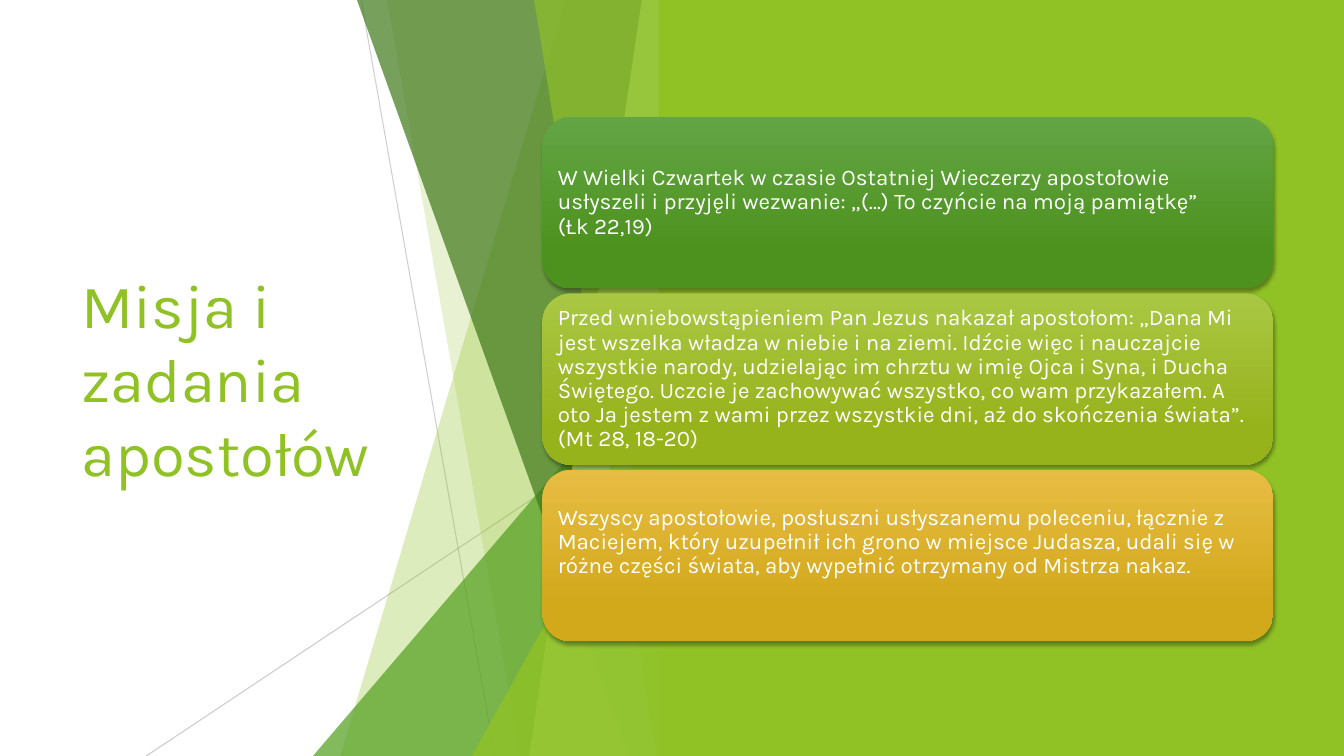
from pptx import Presentation
from pptx.dml.color import RGBColor
from pptx.enum.shapes import MSO_CONNECTOR, MSO_SHAPE
from pptx.enum.text import MSO_ANCHOR, MSO_AUTO_SIZE, PP_ALIGN
from pptx.oxml import parse_xml
from pptx.oxml.ns import nsdecls
from pptx.util import Pt
from lxml.etree import SubElement

FONT = "Karla"
A = "{http://schemas.openxmlformats.org/drawingml/2006/main}"
COLORS = {
    "white": "FFFFFF", "black": "000000", "gray": "BFBFBF",
    "lime": "90C226", "green": "54A021", "dark": "3F7819", "pale": "C0E474",
    "green_top": "63A545", "green_end": "4D921E",
    "olive_top": "AAC744", "olive_end": "97B31C",
    "gold_top": "E7BC43", "gold_end": "D2A91B",
}
RIGHT, BOTTOM = 480, 540
CARD_LEFT, CARD_TOP, CARD_W, CARD_H, CARD_STEP = 387.5, 83.5, 522, 122.5, 126
CARDS = [
    ("green", ["W Wielki Czwartek w czasie Ostatniej Wieczerzy apostołowie usłyszeli "
               "i przyjęli wezwanie: „(…) To czyńcie na moją pamiątkę” ",
               "(Łk 22,19)"]),
    ("olive", ["Przed wniebowstąpieniem Pan Jezus nakazał apostołom: „Dana Mi jest "
               "wszelka władza w niebie i na ziemi. Idźcie więc i nauczajcie wszystkie "
               "narody, udzielając im chrztu w imię Ojca i Syna, i Ducha Świętego. "
               "Uczcie je zachowywać wszystko, co wam przykazałem. A oto Ja jestem z wami "
               "przez wszystkie dni, aż do skończenia świata”. (Mt 28, 18-20)"]),
    ("gold", ["Wszyscy apostołowie, posłuszni usłyszanemu poleceniu, łącznie z Maciejem, "
              "który uzupełnił ich grono w miejsce Judasza, udali się w różne części "
              "świata, aby wypełnić otrzymany od Mistrza nakaz.", ""]),
]


def rgb(name):
    """Return the named colour."""
    return RGBColor.from_string(COLORS[name])


def set_alpha(fill_parent, percent):
    """Make the solid fill inside an element partly transparent."""
    color = fill_parent.find(f"{A}solidFill")[0]
    SubElement(color, f"{A}alpha").set("val", str(percent * 1000))


def paint(s, color, alpha=100):
    """Give a shape a flat fill without outline or shadow."""
    s.shadow.inherit = False
    s.fill.solid()
    s.fill.fore_color.rgb = rgb(color)
    s.line.fill.background()
    if alpha < 100:
        set_alpha(s._element.spPr, alpha)


def add_facet(slide, top_left, bottom_left, color, alpha):
    """Draw a full-height facet with a slanted left edge."""
    fb = slide.shapes.build_freeform(Pt(top_left), 0)
    corners = [(RIGHT, 0), (RIGHT, BOTTOM), (bottom_left, BOTTOM)]
    fb.add_line_segments([(Pt(x), Pt(y)) for x, y in corners])
    paint(fb.convert_to_shape(), color, alpha)


def add_triangle(slide, left, top, color, alpha):
    """Draw a right triangle standing in the facets' lower right corner."""
    s = slide.shapes.add_shape(MSO_SHAPE.ISOSCELES_TRIANGLE, Pt(left), Pt(top),
                               Pt(RIGHT - left), Pt(BOTTOM - top))
    s.adjustments[0] = 1
    paint(s, color, alpha)


def add_ray(slide, x1, y1, x2, y2, alpha):
    """Draw a thin gray line."""
    s = slide.shapes.add_connector(MSO_CONNECTOR.STRAIGHT, Pt(x1), Pt(y1), Pt(x2), Pt(y2))
    s.line.color.rgb = rgb("gray")
    s.line.width = Pt(0.75)
    set_alpha(s.line._ln, alpha)
    SubElement(s._element.spPr, f"{A}effectLst")


def add_run(p, text, size, color):
    """Append a formatted run to a paragraph."""
    r = p.add_run()
    r.text = text
    r.font.name = FONT
    r.font.size = Pt(size)
    r.font.color.rgb = rgb(color)


def add_title(slide, text):
    """Place and format the title placeholder."""
    s = slide.shapes.title
    s.left, s.top, s.width, s.height = Pt(51), Pt(108.5), Pt(279.5), Pt(322.5)
    tf = s.text_frame
    tf.auto_size = MSO_AUTO_SIZE.NONE
    tf.vertical_anchor = MSO_ANCHOR.MIDDLE
    p = tf.paragraphs[0]
    p.alignment = PP_ALIGN.LEFT
    add_run(p, text, 44, "lime")


def add_shadow(s):
    """Add a soft shadow below a shape."""
    s._element.spPr.append(parse_xml(
        f'<a:effectLst {nsdecls("a")}><a:outerShdw blurRad="{Pt(3)}" dist="{Pt(2)}" '
        f'dir="5400000" rotWithShape="0"><a:srgbClr val="{COLORS["black"]}">'
        '<a:alpha val="35000"/></a:srgbClr></a:outerShdw></a:effectLst>'))


def add_card(slide, top, tone, lines):
    """Draw a rounded gradient card with its text."""
    s = slide.shapes.add_shape(MSO_SHAPE.ROUNDED_RECTANGLE, Pt(CARD_LEFT), Pt(top),
                               Pt(CARD_W), Pt(CARD_H))
    s.fill.gradient()
    s.fill.gradient_angle = 270
    for stop, part, position in zip(s.fill.gradient_stops, ("top", "end"), (0, 0.78)):
        stop.color.rgb = rgb(f"{tone}_{part}")
        stop.position = position
    s.line.fill.background()
    add_shadow(s)
    tf = s.text_frame
    tf.word_wrap = True
    tf.vertical_anchor = MSO_ANCHOR.MIDDLE
    tf.margin_left = tf.margin_right = tf.margin_top = tf.margin_bottom = Pt(5)
    p = tf.paragraphs[0]
    p.alignment = PP_ALIGN.LEFT
    p.line_spacing = 0.9
    p.font.size = Pt(16)
    for i, line in enumerate(lines):
        if i:
            p.add_line_break()
        if line:
            add_run(p, line, 16, "white")


def main():
    """Build the slide and save it."""
    prs = Presentation()
    prs.slide_width, prs.slide_height = Pt(960), Pt(BOTTOM)
    slide = prs.slides.add_slide(prs.slide_layouts[5])
    add_title(slide, "Misja i zadania apostołów")

    add_ray(slide, 258, 0, 353.5, BOTTOM, 75)
    add_ray(slide, RIGHT, 290, 104.5, BOTTOM, 80)
    add_facet(slide, 404, 243, "lime", 30)
    add_facet(slide, 276.5, 371.5, "lime", 20)
    add_triangle(slide, 223.5, 240, "green", 72)
    add_facet(slide, 255, 449, "dark", 70)
    add_facet(slide, 458.5, 378, "pale", 70)
    add_facet(slide, 381.5, 469, "lime", 65)
    add_triangle(slide, 337, 283, "lime", 80)

    panel = slide.shapes.add_shape(MSO_SHAPE.RECTANGLE, Pt(470.5), 0, Pt(489.5), Pt(BOTTOM))
    paint(panel, "lime")
    for i, (tone, lines) in enumerate(CARDS):
        add_card(slide, CARD_TOP + i * CARD_STEP, tone, lines)
    prs.save("out.pptx")


if __name__ == "__main__":
    main()
